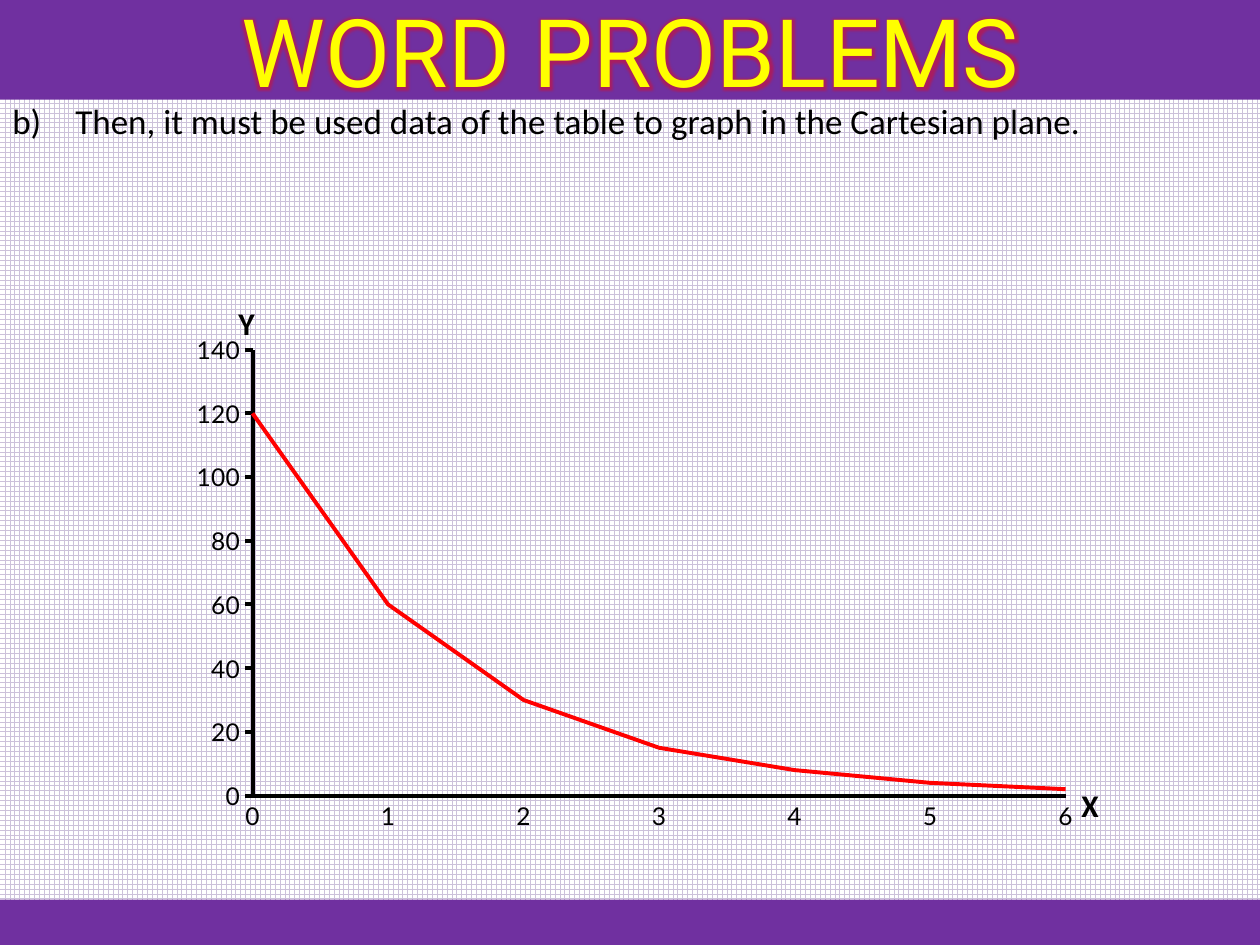
from lxml import etree
from pptx import Presentation
from pptx.chart import data
from pptx.dml import color
from pptx.enum import chart as kinds, dml, shapes, text
from pptx.oxml import ns, parse_xml
from pptx.util import Inches, Pt


def rgb(code):
    return color.RGBColor.from_string(code)


def place(parent, index, **parts):
    """Give a chart part a manual layout as its child at index."""
    for old in parent.findall(ns.qn("c:layout")):
        parent.remove(old)
    layout = etree.Element(ns.qn("c:layout"))
    manual = etree.SubElement(layout, ns.qn("c:manualLayout"))
    if "w" in parts:
        etree.SubElement(manual, ns.qn("c:layoutTarget"), val="inner")
    for name in ("xMode", "yMode"):
        etree.SubElement(manual, ns.qn("c:" + name), val="edge")
    for name, value in parts.items():
        etree.SubElement(manual, ns.qn("c:" + name), val=str(value))
    parent.insert(index, layout)


prs = Presentation()
prs.slide_width, prs.slide_height = Inches(10), Inches(7.5)
slide = prs.slides.add_slide(prs.slide_layouts[5])
back = slide.background.fill
back.patterned()
back.pattern = dml.MSO_PATTERN.LARGE_GRID
back.fore_color.rgb = rgb("CCC1DA")
back.back_color.rgb = rgb("FFFFFF")

# Title band
title = slide.shapes.title
title.left, title.top = Inches(0), Inches(0)
title.width, title.height = Inches(10), Inches(0.79)
title.fill.solid()
title.fill.fore_color.rgb = rgb("7030A0")
frame = title.text_frame
frame.auto_size = text.MSO_AUTO_SIZE.NONE
frame.vertical_anchor = text.MSO_ANCHOR.MIDDLE
para = frame.paragraphs[0]
para.alignment = text.PP_ALIGN.CENTER
run = para.add_run()
run.text = "WORD PROBLEMS"
run.font.size = Pt(54)
run.font.name = "Roboto"
run.font.color.rgb = rgb("FFFF00")
props = run.font._element
props.insert(0, parse_xml(
    f'<a:ln {ns.nsdecls("a")} w="9525"><a:solidFill><a:srgbClr val="F79646"/>'
    '</a:solidFill></a:ln>'))
props.insert(2, parse_xml(
    f'<a:effectLst {ns.nsdecls("a")}><a:glow rad="63500"><a:srgbClr val="FF0000">'
    '<a:alpha val="40000"/></a:srgbClr></a:glow></a:effectLst>'))

# Bottom band
band = slide.shapes.add_shape(shapes.MSO_SHAPE.RECTANGLE, Inches(0), Inches(7.14),
                              Inches(10), Inches(0.39))
band.shadow.inherit = False
band.fill.solid()
band.fill.fore_color.rgb = rgb("7030A0")
band.line.fill.background()

# Instruction, lettered b)
box = slide.shapes.add_textbox(Inches(0), Inches(0.74), Inches(10), Inches(0.77))
box.text_frame.word_wrap = True
para = box.text_frame.paragraphs[0]
para.alignment = text.PP_ALIGN.JUSTIFY
run = para.add_run()
run.text = "Then, it must be used data of the table to graph in the Cartesian plane."
run.font.size = Pt(20)
run.font.name = "Calibri"
run.font.color.rgb = rgb("000000")
props = para._p.get_or_add_pPr()
props.set("marL", str(Inches(0.5)))
props.set("indent", str(-Inches(0.5)))
etree.SubElement(props, ns.qn("a:buAutoNum"), type="alphaLcParenR", startAt="2")

# Decay curve
table = data.CategoryChartData()
table.categories = [str(x) for x in range(7)]
table.add_series("Series 1", [120, 60, 30, 15, 8, 4, 2])
chart = slide.shapes.add_chart(kinds.XL_CHART_TYPE.LINE, Inches(1.06), Inches(2.02),
                               Inches(7.87), Inches(4.72), table).chart
chart.has_legend = False
chart.has_title = False
chart.font.size = Pt(18)
chart.font.name = "Calibri"
chart.font.color.rgb = rgb("000000")
chart.plots[0].vary_by_categories = False
curve = chart.plots[0].series[0]
curve.smooth = False
curve.marker.style = kinds.XL_MARKER_STYLE.NONE
curve.format.line.color.rgb = rgb("FF0000")
curve.format.line.width = Pt(2.25)

ticks = kinds.XL_TICK_MARK
for axis, name, mark, x, y in (
        (chart.category_axis, "X", ticks.NONE, 0.95, 0.88),
        (chart.value_axis, "Y", ticks.OUTSIDE, 0.1, 0.07)):
    axis.has_major_gridlines = False
    axis.major_tick_mark = mark
    axis.minor_tick_mark = ticks.NONE
    axis.format.line.color.rgb = rgb("000000")
    axis.format.line.width = Pt(2.25)
    label = axis.tick_labels.font
    label.size = Pt(14)
    label.name = "Lato"
    label.color.rgb = rgb("000000")
    frame = axis.axis_title.text_frame
    run = frame.paragraphs[0].add_run()
    run.text = name
    run.font.size = Pt(18)
    run.font.bold = True
    run.font.name = "Calibri"
    run.font.color.rgb = rgb("000000")
    turn = frame._txBody.find(ns.qn("a:bodyPr"))
    turn.set("rot", "0")
    turn.set("vert", "horz")
    place(axis.axis_title._element, 1, x=x, y=y)

# Start the curve on the value axis
values = chart.value_axis
values.minimum_scale = 0
values.maximum_scale = 140
values.major_unit = 20
between = etree.Element(ns.qn("c:crossBetween"), val="midCat")
values._element.find(ns.qn("c:majorUnit")).addprevious(between)
area = chart._chartSpace.find(".//" + ns.qn("c:plotArea"))
place(area, 0, x=0.12, y=0.16, w=0.82, h=0.75)

prs.save("out.pptx")
